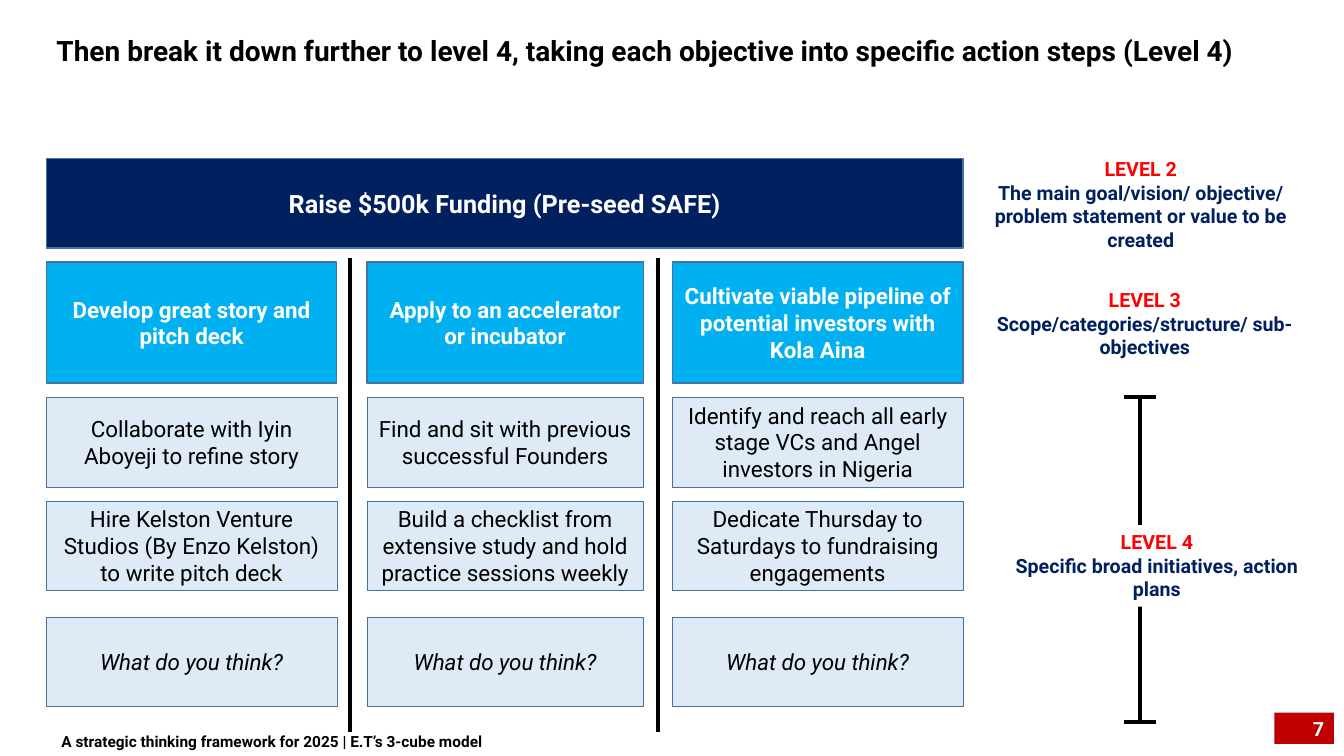
from collections import namedtuple

from lxml import etree
from pptx import Presentation
from pptx.dml.color import RGBColor
from pptx.enum.shapes import MSO_CONNECTOR, MSO_SHAPE
from pptx.enum.text import MSO_ANCHOR, MSO_AUTO_SIZE, PP_ALIGN
from pptx.oxml.ns import qn
from pptx.util import Emu, Pt

PX = 9144
FONT = "Roboto"
BLACK = RGBColor(0x00, 0x00, 0x00)
WHITE = RGBColor(0xFF, 0xFF, 0xFF)
RED = RGBColor(0xFF, 0x00, 0x00)
CRIMSON = RGBColor(0xC0, 0x00, 0x00)
NAVY = RGBColor(0x00, 0x20, 0x60)
SKY = RGBColor(0x00, 0xB0, 0xF0)
PALE = RGBColor(0xDE, 0xEB, 0xF7)
OUTLINE = RGBColor(0x43, 0x73, 0x9E)

LEFT, CENTER, RIGHT = PP_ALIGN.LEFT, PP_ALIGN.CENTER, PP_ALIGN.RIGHT
TOP, MIDDLE = MSO_ANCHOR.TOP, MSO_ANCHOR.MIDDLE
NO_FIT = MSO_AUTO_SIZE.NONE
RECTANGLE = MSO_SHAPE.RECTANGLE
HOME_PLATE = MSO_SHAPE.PENTAGON
CHEVRON = MSO_SHAPE.CHEVRON
STRAIGHT = MSO_CONNECTOR.STRAIGHT

Box = namedtuple("Box", "left top width height")
Objective = namedtuple("Objective", "left width outline heading actions")

OBJECTIVES = [
    Objective(0, 288, HOME_PLATE, "Develop great story and pitch deck", [
        "Collaborate with Iyin Aboyeji to refine story",
        "Hire Kelston Venture Studios (By Enzo Kelston) to write pitch deck",
        "What do you think?",
    ]),
    Objective(318, 274, CHEVRON, "Apply to an accelerator or incubator", [
        "Find and sit with previous successful Founders",
        "Build a checklist from extensive study and hold practice sessions weekly",
        "What do you think?",
    ]),
    Objective(621, 288, CHEVRON,
              "Cultivate viable pipeline of potential investors with Kola Aina", [
        "Identify and reach all early stage VCs and Angel investors in Nigeria",
        "Dedicate Thursday to Saturdays to fundraising engagements",
        "What do you think?",
    ]),
]
ACTION_TOPS = [237, 340, 455]
ACTION_HEIGHT = 89
DIVIDERS = [301, 607]

LEVELS = [
    (Box(0, 0, 333, 104), "LEVEL 2",
     "The main goal/vision/ objective/ problem statement or value to be created"),
    (Box(4, 130, 333, 81), "LEVEL 3", "Scope/categories/structure/ sub-objectives"),
    (Box(16, 370, 333, 81), "LEVEL 4", "Specific broad initiatives, action plans"),
]


def emu(box):
    return [Emu(length * PX) for length in box]


def within(area, box):
    return Box(area.left + box.left, area.top + box.top, box.width, box.height)


def write(frame, text, size=14, color=BLACK, bold=False, italic=False,
          align=CENTER, anchor=MIDDLE, heading_color=None):
    frame.word_wrap = True
    frame.auto_size = NO_FIT
    frame.vertical_anchor = anchor
    frame.margin_left = frame.margin_right = Emu(10 * PX)
    frame.margin_top = frame.margin_bottom = Emu(5 * PX)
    for index, line in enumerate(text.split("\n")):
        para = frame.paragraphs[0] if index == 0 else frame.add_paragraph()
        para.alignment = align
        span = para.add_run()
        span.text = line
        span.font.name = FONT
        span.font.size = Pt(size)
        span.font.bold = bold
        span.font.italic = italic
        first_color = heading_color or color
        span.font.color.rgb = first_color if index == 0 else color


def add_panel(page, box, fill, outline=RECTANGLE, line_width=None):
    panel = page.shapes.add_shape(outline, *emu(box))
    panel.shadow.inherit = False
    panel.fill.solid()
    panel.fill.fore_color.rgb = fill
    if line_width is None:
        panel.line.fill.background()
    else:
        panel.line.color.rgb = OUTLINE
        panel.line.width = Pt(line_width)
    if outline != RECTANGLE:
        panel.adjustments[0] = 0
    return panel.text_frame


def add_rule(page, left, top, width=0, height=0):
    rule = page.shapes.add_connector(
        STRAIGHT, *emu((left, top, left + width, top + height)))
    rule.line.color.rgb = BLACK
    rule.line.width = Pt(3)
    etree.SubElement(rule._element.spPr, qn("a:effectLst"))


def add_title(page, box):
    title = page.shapes.title
    title.left, title.top, title.width, title.height = emu(box)
    write(title.text_frame,
          "Then break it down further to level 4, taking each objective "
          "into specific action steps (Level 4)",
          size=20, bold=True, align=LEFT, anchor=TOP)


def add_objective(page, area, objective):
    def cell(top, height):
        return within(area, Box(objective.left, top, objective.width, height))

    heading = add_panel(page, cell(103, 120), SKY, objective.outline, 1)
    write(heading, objective.heading, size=16, color=WHITE, bold=True)
    for top, action in zip(ACTION_TOPS, objective.actions):
        frame = add_panel(page, cell(top, ACTION_HEIGHT), PALE, line_width=0.25)
        write(frame, action, size=16, italic=top == ACTION_TOPS[-1])


def add_plan(page, area):
    goal = add_panel(page, within(area, Box(0, 0, area.width, 89)),
                     NAVY, HOME_PLATE, 1)
    write(goal, "Raise $500k Funding (Pre-seed SAFE)",
          size=18, color=WHITE, bold=True)
    for objective in OBJECTIVES:
        add_objective(page, area, objective)
    for offset in DIVIDERS:
        add_rule(page, area.left + offset, area.top + 99, height=470)


def add_levels(page, area):
    span_left, span_top, span_height = area.left + 166, area.top + 243, 322
    add_rule(page, span_left, span_top, height=span_height)
    for top in (span_top, span_top + span_height):
        add_rule(page, span_left - 16, top, width=32)
    for box, level, meaning in LEVELS:
        place = within(area, box)
        if level == "LEVEL 4":
            frame = add_panel(page, place, WHITE)
        else:
            frame = page.shapes.add_textbox(*emu(place)).text_frame
        write(frame, f"{level}\n{meaning}", color=NAVY, bold=True,
              anchor=TOP, heading_color=RED)


def add_footer(page, area):
    number = add_panel(page, within(area, Box(1213, 0, 59, 31)), CRIMSON)
    write(number, "7", color=WHITE, bold=True, align=RIGHT)
    credit = page.shapes.add_textbox(*emu(within(area, Box(0, 14, 577, 29))))
    write(credit.text_frame,
          "A strategic thinking framework for 2025 | E.T’s 3-cube model",
          size=11, bold=True, align=LEFT, anchor=TOP)


def main():
    deck = Presentation()
    deck.slide_width, deck.slide_height = Emu(1333 * PX), Emu(750 * PX)
    page = deck.slides.add_slide(deck.slide_layouts[5])
    add_title(page, Box(46, 28, 1237, 44))
    add_plan(page, Box(46, 157, 909, 544))
    add_levels(page, Box(965, 151, 349, 565))
    add_footer(page, Box(51, 707, 1272, 43))
    deck.save("out.pptx")


if __name__ == "__main__":
    main()
